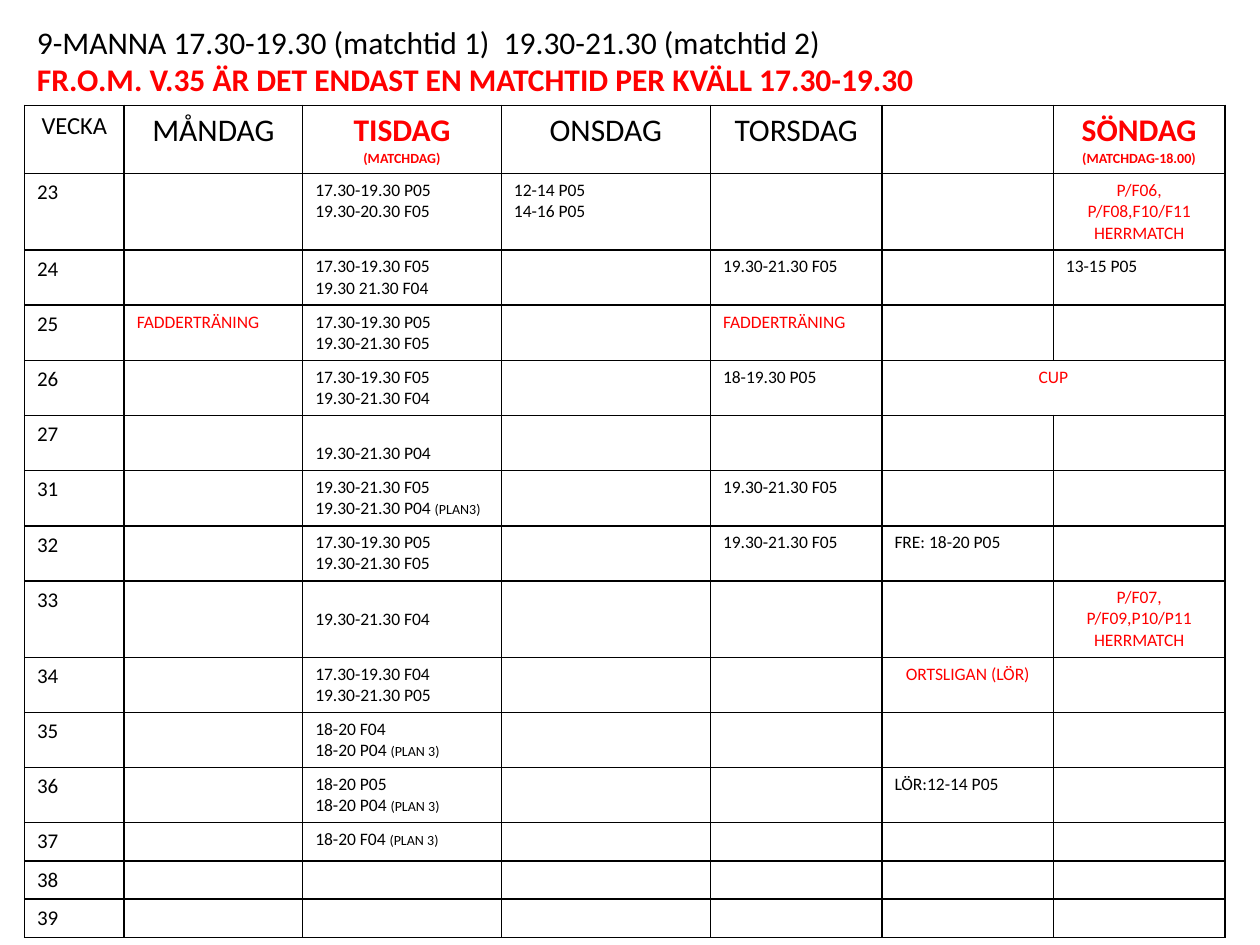
"""Builds the weekly 9-a-side pitch schedule slide."""
import pptx
import pptx.dml.color
import pptx.enum.text
import pptx.oxml
import pptx.oxml.ns
import pptx.util

Pt = pptx.util.Pt
BLACK = pptx.dml.color.RGBColor(0, 0, 0)
RED = pptx.dml.color.RGBColor(255, 0, 0)
WHITE = pptx.dml.color.RGBColor(255, 255, 255)
LEFT = pptx.enum.text.PP_ALIGN.LEFT
CENTER = pptx.enum.text.PP_ALIGN.CENTER
FONT = "Calibri"
MARGIN_LEFT, CONTENT_WIDTH = 14, 686
BODY_SIZE, NOTE_SIZE, WEEK_SIZE, HEADING_SIZE = 10, 8, 12, 18

MON, TUE, WED, THU, FRI, SUN = range(1, 7)
COLUMN_WIDTHS = [57, 102, 113.5, 119.5, 98, 98, 98]
HEADER_HEIGHT, SHORT_HEIGHT, NORMAL_HEIGHT, TALL_HEIGHT = 38.9, 21.8, 31.5, 43.7
TALL_WEEKS, SHORT_WEEKS = {23, 33}, {37, 38, 39}
LATE_ONLY_WEEKS = {27, 33}
CUP_WEEK = 26
LINE_HEIGHT = 12.2

TITLE_LINES = [
    "9-MANNA 17.30-19.30 (matchtid 1)  19.30-21.30 (matchtid 2)",
    "FR.O.M. V.35 ÄR DET ENDAST EN MATCHTID PER KVÄLL 17.30-19.30",
]
HEADINGS = [
    (["VECKA"], BLACK, 14),
    (["MÅNDAG"], BLACK, HEADING_SIZE),
    ([("TISDAG ", "(MATCHDAG)")], RED, HEADING_SIZE),
    (["ONSDAG"], BLACK, HEADING_SIZE),
    (["TORSDAG"], BLACK, HEADING_SIZE),
    ([], BLACK, HEADING_SIZE),
    (["SÖNDAG", ("", "(MATCHDAG-18.00)")], RED, HEADING_SIZE),
]
BOOKINGS = {
    23: {TUE: ["17.30-19.30 P05", "19.30-20.30 F05"], WED: ["12-14 P05", "14-16 P05"]},
    24: {TUE: ["17.30-19.30 F05", "19.30 21.30 F04"], THU: ["19.30-21.30 F05"],
         SUN: ["13-15 P05"]},
    25: {TUE: ["17.30-19.30 P05", "19.30-21.30 F05"]},
    26: {TUE: ["17.30-19.30 F05", "19.30-21.30 F04"], THU: ["18-19.30 P05"]},
    27: {TUE: ["19.30-21.30 P04"]},
    31: {TUE: ["19.30-21.30 F05", ("19.30-21.30 P04 ", "(PLAN3)")],
         THU: ["19.30-21.30 F05"]},
    32: {TUE: ["17.30-19.30 P05", "19.30-21.30 F05"], THU: ["19.30-21.30 F05"],
         FRI: ["FRE: 18-20 P05"]},
    33: {TUE: ["19.30-21.30 F04"]},
    34: {TUE: ["17.30-19.30 F04", "19.30-21.30 P05"]},
    35: {TUE: ["18-20 F04", ("18-20 P04 ", "(PLAN 3)")]},
    36: {TUE: ["18-20 P05", ("18-20 P04 ", "(PLAN 3)")], FRI: ["LÖR:12-14 P05"]},
    37: {TUE: [("18-20 F04 ", "(PLAN 3)")]},
    38: {},
    39: {},
}
NOTICES = {
    (23, SUN): ("P/F06, P/F08,F10/F11 HERRMATCH", CENTER),
    (25, MON): ("FADDERTRÄNING", LEFT),
    (25, THU): ("FADDERTRÄNING", LEFT),
    (CUP_WEEK, FRI): ("CUP", CENTER),
    (33, SUN): ("P/F07, P/F09,P10/P11 HERRMATCH", CENTER),
    (34, FRI): ("ORTSLIGAN (LÖR)", CENTER),
}


def write_lines(frame, lines, size, color=BLACK, align=LEFT, bold=False):
    """Write each line as a paragraph; a pair is main text and a small note."""
    for index, line in enumerate(lines or [""]):
        paragraph = frame.add_paragraph() if index else frame.paragraphs[0]
        paragraph.alignment = align
        main, note = line if isinstance(line, tuple) else (line, "")
        font = paragraph.font
        font.name, font.bold, font.color.rgb = FONT, bold, color
        font.size = Pt(size if main or not note else NOTE_SIZE)
        if main:
            paragraph.add_run().text = main
        if note:
            note_run = paragraph.add_run()
            note_run.text = note
            note_run.font.size = Pt(NOTE_SIZE)


def style_cell(cell):
    """Give a cell a white fill and thin black borders."""
    properties = cell._tc.get_or_add_tcPr()
    for side in ("lnL", "lnR", "lnT", "lnB"):
        properties.append(pptx.oxml.parse_xml(
            f'<a:{side} {pptx.oxml.ns.nsdecls("a")} w="{Pt(1)}"><a:solidFill>'
            f'<a:srgbClr val="{BLACK}"/></a:solidFill></a:{side}>'))
    cell.fill.solid()
    cell.fill.fore_color.rgb = WHITE


def row_height(week):
    """Return the height of a week's row."""
    if week in TALL_WEEKS:
        return TALL_HEIGHT
    return SHORT_HEIGHT if week in SHORT_WEEKS else NORMAL_HEIGHT


def add_title(slide):
    """Add the two title lines above the schedule."""
    title = slide.shapes.add_textbox(Pt(MARGIN_LEFT), Pt(9.4), Pt(CONTENT_WIDTH), Pt(51))
    frame = title.text_frame
    frame.word_wrap = True
    frame.auto_size = pptx.enum.text.MSO_AUTO_SIZE.SHAPE_TO_FIT_TEXT
    write_lines(frame, TITLE_LINES, HEADING_SIZE)
    warning = frame.paragraphs[1].font
    warning.bold, warning.color.rgb = True, RED


def fill_week(schedule, row, week):
    """Fill one week's row with its number, bookings and notices."""
    write_lines(schedule.cell(row, 0).text_frame, [str(week)], WEEK_SIZE)
    for day in range(MON, SUN + 1):
        cell = schedule.cell(row, day)
        if (week, day) in NOTICES:
            notice, align = NOTICES[week, day]
            write_lines(cell.text_frame, [notice], BODY_SIZE, RED, align)
        else:
            write_lines(cell.text_frame, BOOKINGS[week].get(day), BODY_SIZE)
    if week in LATE_ONLY_WEEKS:
        schedule.cell(row, TUE).margin_top = Pt(3.6 + LINE_HEIGHT)
    if week == CUP_WEEK:
        schedule.cell(row, FRI).merge(schedule.cell(row, SUN))


def add_schedule(slide):
    """Add the schedule table."""
    heights = [HEADER_HEIGHT] + [row_height(week) for week in BOOKINGS]
    schedule = slide.shapes.add_table(
        len(heights), len(COLUMN_WIDTHS), Pt(MARGIN_LEFT), Pt(60.2),
        Pt(CONTENT_WIDTH), Pt(sum(heights))).table
    schedule.first_row = schedule.horz_banding = False
    for column, width in zip(schedule.columns, COLUMN_WIDTHS):
        column.width = Pt(width)
    for row, height in zip(schedule.rows, heights):
        row.height = Pt(height)
    for cell in schedule.iter_cells():
        style_cell(cell)
    for day, (lines, color, size) in enumerate(HEADINGS):
        write_lines(schedule.cell(0, day).text_frame, lines, size, color, CENTER, color == RED)
    for row, week in enumerate(BOOKINGS, start=1):
        fill_week(schedule, row, week)


def main():
    """Build and save the slide."""
    deck = pptx.Presentation()
    deck.slide_width, deck.slide_height = Pt(720), Pt(540)
    slide = deck.slides.add_slide(deck.slide_layouts[6])
    add_schedule(slide)
    add_title(slide)
    deck.save("out.pptx")


if __name__ == "__main__":
    main()
